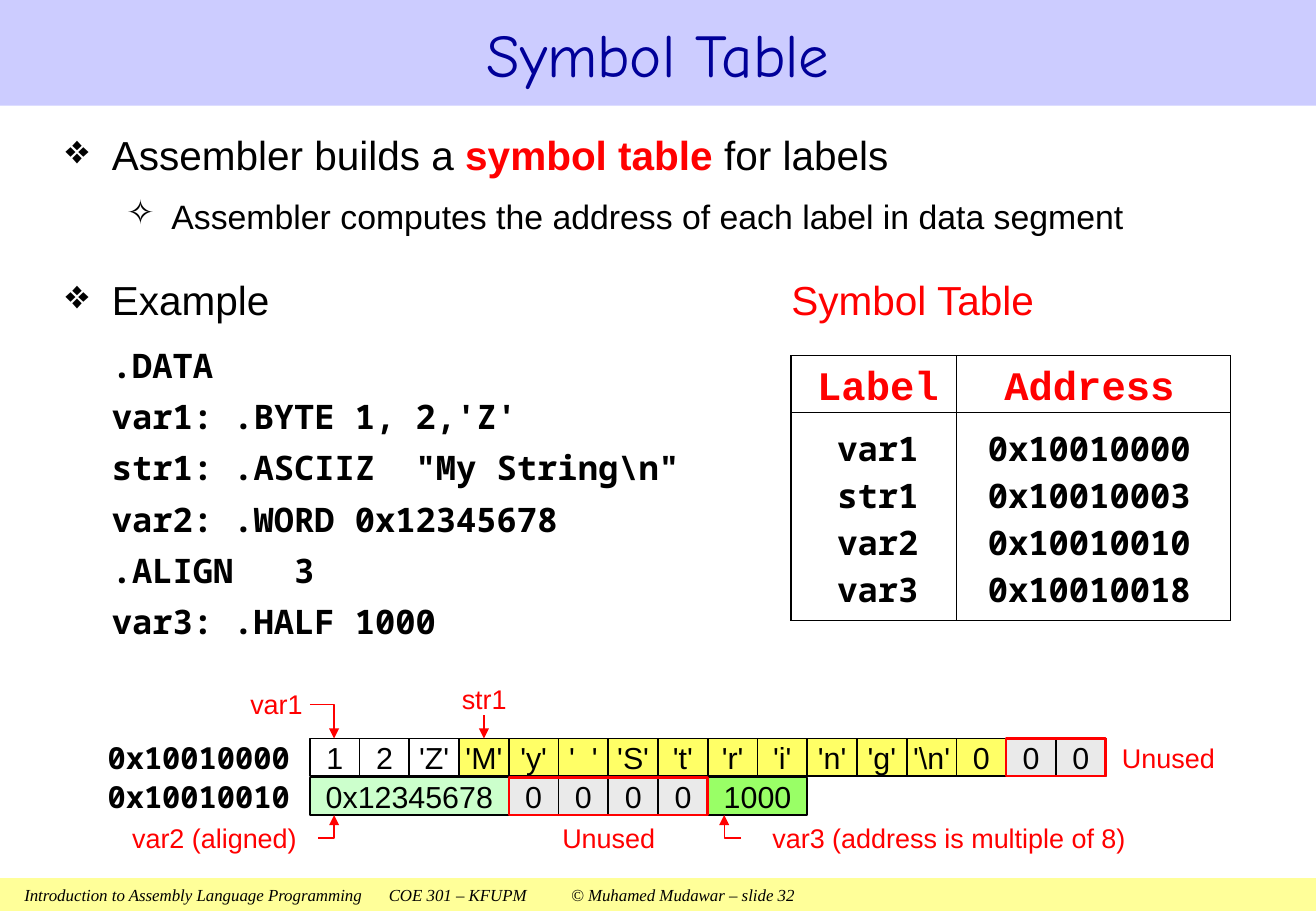
from lxml import etree
from pptx import Presentation
from pptx.dml.color import RGBColor
from pptx.enum.shapes import MSO_CONNECTOR, MSO_SHAPE
from pptx.enum.text import MSO_ANCHOR, PP_ALIGN
from pptx.oxml.ns import qn
from pptx.util import Inches, Pt

RECT, STRAIGHT = MSO_SHAPE.RECTANGLE, MSO_CONNECTOR.STRAIGHT
TOP, MIDDLE, BOTTOM = MSO_ANCHOR.TOP, MSO_ANCHOR.MIDDLE, MSO_ANCHOR.BOTTOM
LEFT, CENTER = PP_ALIGN.LEFT, PP_ALIGN.CENTER

BLACK = RGBColor(0x00, 0x00, 0x00)
RED = RGBColor(0xFF, 0x00, 0x00)
NAVY = RGBColor(0x00, 0x00, 0x99)
LILAC = RGBColor(0xCC, 0xCC, 0xFF)
CREAM = RGBColor(0xFF, 0xFF, 0x99)
YELLOW = RGBColor(0xFF, 0xFF, 0x66)
MINT = RGBColor(0xCC, 0xFF, 0xCC)
GREEN = RGBColor(0x99, 0xFF, 0x66)
GRAY = RGBColor(0xEA, 0xEA, 0xEA)

MONO = "Noto Sans Mono"
WIDTH, HEIGHT = 10.83, 7.5
GRID_X, CELL_W, CELL_H = 2.55, 6.55 / 16, 0.31
ROW_Y = (6.08, 6.4)

CODE = [
    (".DATA", ()),
    ("var1:\t.BYTE\t1, 2,'Z'", (1.55, 2.88)),
    ("str1:\t.ASCIIZ\t\"My String\\n\"", (1.55, 2.88)),
    ("var2:\t.WORD\t0x12345678", (1.55, 2.88)),
    (".ALIGN\t3", (1.71,)),
    ("var3:\t.HALF\t1000", (1.55, 2.88)),
]
SYMBOLS = [
    ("Label", "Address"),
    ("var1", "0x10010000"),
    ("str1", "0x10010003"),
    ("var2", "0x10010010"),
    ("var3", "0x10010018"),
]
BYTES = [
    ("1", None), ("2", None), ("'Z'", None), ("'M'", YELLOW), ("'y'", YELLOW),
    ("'  '", YELLOW), ("'S'", YELLOW), ("'t'", YELLOW), ("'r'", YELLOW),
    ("'i'", YELLOW), ("'n'", YELLOW), ("'g'", YELLOW), ("'\\n'", YELLOW),
    ("0", YELLOW), ("0", GRAY), ("0", GRAY),
]
LABELS = [
    ("var1", 2, 5.64, 0.55, 0.31),
    ("str1", 3.71, 5.64, 0.55, 0.22),
    ("Unused", 9.17, 6.08, 0.89, 0.31),
    ("var2 (aligned)", 0.91, 6.77, 1.71, 0.25),
    ("Unused", 4.53, 6.77, 0.96, 0.25),
    ("var3 (address is multiple of 8)", 6.17, 6.77, 3.28, 0.25),
]


def write(para, text, size=18, color=BLACK, font="Arial", bold=False, italic=False):
    """Add a formatted run to a paragraph."""
    run = para.add_run()
    run.text = text
    run.font.size, run.font.name = Pt(size), font
    run.font.bold, run.font.italic = bold, italic
    run.font.color.rgb = color


def indent(para, left, hang=0, bullet=None, tabs=(), align="l"):
    """Set a paragraph's indent, bullet and tab stops."""
    props = para._p.get_or_add_pPr()
    props.set("marL", str(Inches(left)))
    props.set("indent", str(Inches(-hang)))
    if bullet:
        etree.SubElement(props, qn("a:buChar"), char=bullet)
    if tabs:
        stops = etree.SubElement(props, qn("a:tabLst"))
        for tab in tabs:
            etree.SubElement(stops, qn("a:tab"), pos=str(Inches(tab)), algn=align)


def frame(shape, anchor=MIDDLE, left=0, top=0):
    """Set up a shape's text frame and return it."""
    text = shape.text_frame
    text.word_wrap = True
    text.vertical_anchor = anchor
    text.margin_left, text.margin_right = Inches(left), 0
    text.margin_top = text.margin_bottom = Inches(top)
    return text


def label(slide, text, x, y, w, h, **style):
    """Add a centred text box."""
    box = slide.shapes.add_textbox(Inches(x), Inches(y), Inches(w), Inches(h))
    para = frame(box).paragraphs[0]
    para.alignment = CENTER
    write(para, text, **style)


def block(slide, x, y, w, h, fill=None, line=None, weight=1):
    """Add a rectangle with an optional fill and line."""
    shape = slide.shapes.add_shape(RECT, Inches(x), Inches(y), Inches(w), Inches(h))
    shape.shadow.inherit = False
    if fill is None:
        shape.fill.background()
    else:
        shape.fill.solid()
        shape.fill.fore_color.rgb = fill
    if line is None:
        shape.line.fill.background()
    else:
        shape.line.color.rgb = line
        shape.line.width = Pt(weight)
    return shape


def cell(slide, text, col, row, span=1, fill=None):
    """Add a memory cell on the byte grid."""
    x = GRID_X + col * CELL_W
    shape = block(slide, x, ROW_Y[row], span * CELL_W, CELL_H, fill, BLACK)
    para = frame(shape).paragraphs[0]
    para.alignment = CENTER
    write(para, text)
    return shape


def arrow(shape):
    """Make a line thin and red with a head at its end."""
    shape.line.color.rgb = RED
    shape.line.width = Pt(0.75)
    props = shape._element.spPr
    etree.SubElement(props.find(qn("a:ln")), qn("a:tailEnd"), type="triangle")
    if props.find(qn("a:effectLst")) is None:
        etree.SubElement(props, qn("a:effectLst"))


def elbow(slide, start, end):
    """Add an arrow that runs across and then up or down."""
    (x, y), (tip_x, tip_y) = start, end
    form = slide.shapes.build_freeform(Inches(x), Inches(y))
    form.add_line_segments(
        [(Inches(tip_x), Inches(y)), (Inches(tip_x), Inches(tip_y))], close=False)
    shape = form.convert_to_shape()
    shape.fill.background()
    arrow(shape)


def border(box, sides):
    """Draw the named sides of a table cell and hide the others."""
    props = box._tc.get_or_add_tcPr()
    for spot, side in enumerate("LRTB"):
        line = etree.Element(qn("a:ln" + side), w=str(Pt(0.75)))
        if side in sides:
            fill = etree.SubElement(line, qn("a:solidFill"))
            etree.SubElement(fill, qn("a:srgbClr"), val=str(BLACK))
        else:
            etree.SubElement(line, qn("a:noFill"))
        props.insert(spot, line)


def symbols(slide):
    """Add the symbol table."""
    table = slide.shapes.add_table(
        5, 2, Inches(6.51), Inches(2.93), Inches(3.62), Inches(2.18)).table
    table.first_row = table.horz_banding = False
    for col, width in zip(table.columns, (1.36, 2.26)):
        col.width = Inches(width)
    for row, height in zip(table.rows, (0.47, 0.48, 0.39, 0.39, 0.45)):
        row.height = Inches(height)
    anchors = (BOTTOM, BOTTOM, MIDDLE, MIDDLE, TOP)
    sides = ("LRTB", "LRT", "LR", "LR", "LRB")
    for row, texts in enumerate(SYMBOLS):
        style = {"size": 20, "font": MONO}
        if row == 0:
            style = {"size": 24, "font": "Courier New", "color": RED}
        for col, text in enumerate(texts):
            box = table.cell(row, col)
            box.fill.background()
            border(box, sides[row])
            box.vertical_anchor = anchors[row]
            box.margin_left, box.margin_right = Inches(0.07 * (1 - col)), Inches(0.07 * col)
            box.margin_top = box.margin_bottom = 0
            para = box.text_frame.paragraphs[0]
            para.alignment = CENTER
            write(para, text, bold=True, **style)


def body(slide):
    """Add the bullets and the code listing."""
    box = slide.shapes.add_textbox(Inches(0.54), Inches(0.98), Inches(9.72), Inches(4.66))
    text = frame(box, TOP, top=0.05)
    paras = [text.paragraphs[0]] + [text.add_paragraph() for _ in range(2 + len(CODE))]
    for para, space in zip(paras, [0, 8, 20, 10] + [4] * 5):
        para.line_spacing = 1.1
        para.space_before = Pt(space)
    first, second, third = paras[:3]
    indent(first, 0.38, 0.38, "❖")
    write(first, "Assembler builds a ", 24)
    write(first, "symbol table ", 24, RED, bold=True)
    write(first, "for labels", 24)
    indent(second, 0.87, 0.37, "✧")
    write(second, "Assembler computes the address of each label in data segment", 20)
    indent(third, 0.38, 0.38, "❖", (6.97,), "ctr")
    write(third, "Example\t", 24)
    write(third, "Symbol Table", 24, RED)
    for para, (line, tabs) in zip(paras[3:], CODE):
        indent(para, 0.38, tabs=tabs)
        write(para, line, 20, font=MONO, bold=True)


def memory(slide):
    """Add the memory map with its labels and arrows."""
    cells = [cell(slide, text, col, 0, fill=fill) for col, (text, fill) in enumerate(BYTES)]
    cell(slide, "0x12345678", 0, 1, 4, MINT)
    for col in range(4, 8):
        cell(slide, "0", col, 1, fill=GRAY)
    cell(slide, "1000", 8, 1, 2, GREEN)
    for col, row, span in ((14, 0, 2), (4, 1, 4)):
        block(slide, GRID_X + col * CELL_W, ROW_Y[row], span * CELL_W, CELL_H, None, RED, 1.5)
    for text, y in zip(("0x10010000", "0x10010010"), ROW_Y):
        label(slide, text, 0.78, y, 1.71, CELL_H, font=MONO, bold=True)
    for text, *place in LABELS:
        label(slide, text, *place, size=16, color=RED)
    elbow(slide, (2.55, 5.8), (2.75, 6.08))
    elbow(slide, (2.62, 6.9), (2.75, 6.71))
    elbow(slide, (6.1, 6.9), (5.96, 6.71))
    x = Inches(GRID_X + 3.5 * CELL_W)
    line = slide.shapes.add_connector(STRAIGHT, x, Inches(5.89), x, Inches(6.08))
    line.end_connect(cells[3], 0)
    arrow(line)


def main():
    """Build the slide and save it."""
    deck = Presentation()
    deck.slide_width, deck.slide_height = Inches(WIDTH), Inches(HEIGHT)
    slide = deck.slides.add_slide(deck.slide_layouts[6])
    foot = frame(block(slide, 0, 7.23, WIDTH, 0.27, CREAM), left=0.2).paragraphs[0]
    foot.alignment = LEFT
    indent(foot, 0, tabs=(2.99, 4.99))
    write(foot, "Introduction to Assembly Language Programming\tCOE 301 – KFUPM\t"
          "© Muhamed Mudawar – slide 32", 10, font="Times New Roman", italic=True)
    head = frame(block(slide, 0, 0, WIDTH, 0.87, LILAC)).paragraphs[0]
    head.alignment = CENTER
    write(head, "Symbol Table", 36, NAVY, "Comic Neue")
    body(slide)
    symbols(slide)
    memory(slide)
    deck.save("out.pptx")


if __name__ == "__main__":
    main()
